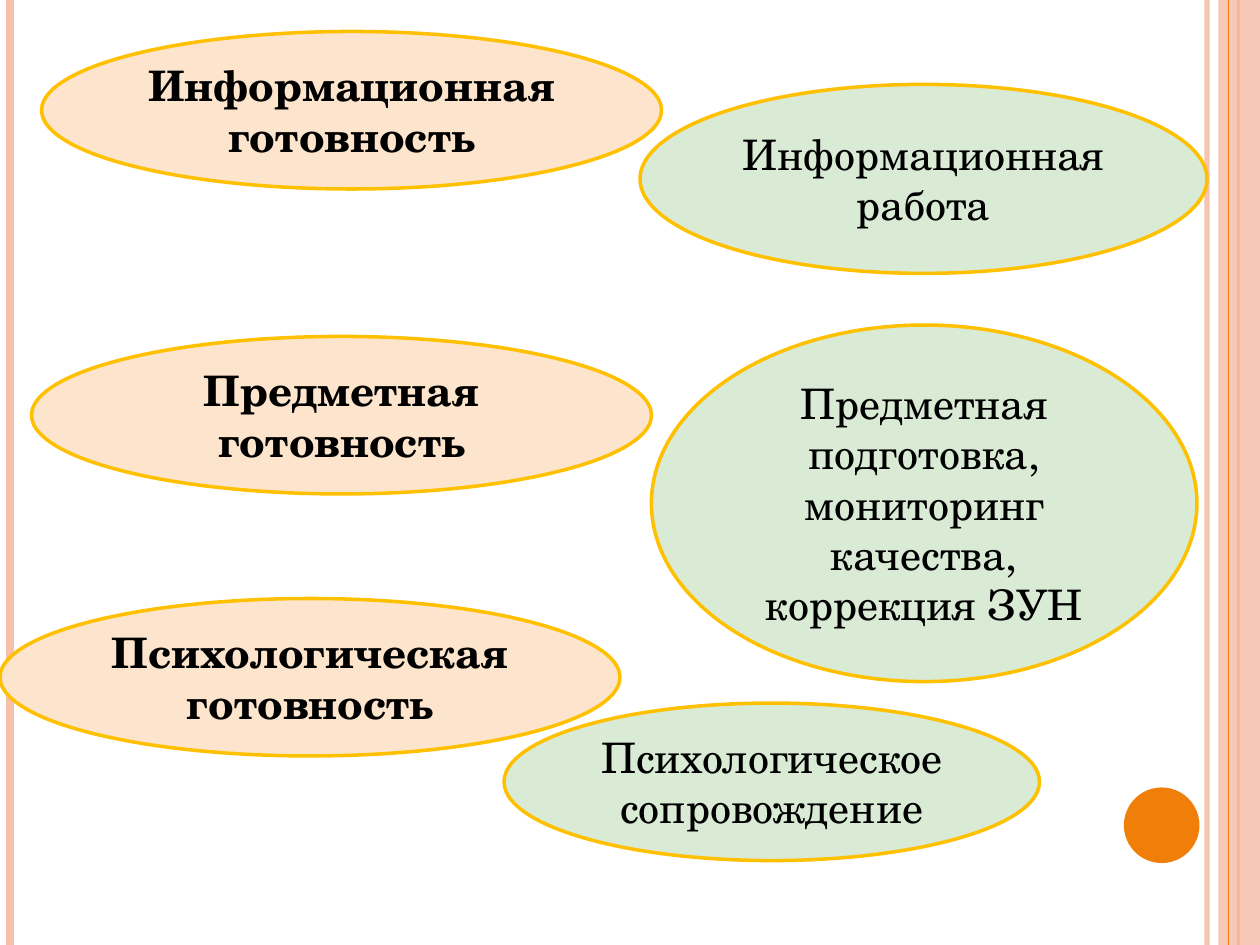
from dataclasses import dataclass

from lxml.etree import SubElement
from pptx import Presentation
from pptx.dml.color import RGBColor
from pptx.enum.shapes import MSO_CONNECTOR, MSO_SHAPE
from pptx.enum.text import MSO_ANCHOR, PP_ALIGN
from pptx.oxml.ns import qn
from pptx.util import Inches, Pt


@dataclass(frozen=True)
class Theme:
    """Colours and type of the slide."""
    accent: str = "F07F09"
    stripe: str = "F6C0AB"
    outline: str = "FFC000"
    readiness: str = "FDE5CD"
    support: str = "D9EAD5"
    ink: str = "000000"
    font: str = "TeX Gyre Schola"
    size: float = 24
    outline_width: float = 2


@dataclass(frozen=True)
class Rule:
    """A full-height vertical line."""
    x: float
    color: str
    width: float
    opacity: int = 100


@dataclass(frozen=True)
class Bubble:
    """A labelled ellipse."""
    text: str
    left: float
    top: float
    width: float
    height: float
    fill: str
    bold: bool = False


THEME = Theme()
WIDTH, HEIGHT = 10, 7.5

BACK_RULES = [
    Rule(9.58, THEME.stripe, 3, 93),
    Rule(0.08, THEME.stripe, 4.5),
    Rule(9.83, THEME.accent, 1.5),
]
FRONT_RULE = Rule(9.75, THEME.accent, 0.75)

READINESS = [
    Bubble(f"{kind} готовность", left, top, 4.92, 1.25, THEME.readiness, True)
    for kind, left, top in [
        ("Информационная", 0.33, 0.25),
        ("Предметная", 0.25, 2.67),
        ("Психологическая", 0, 4.75),
    ]
]
SUPPORT = [
    Bubble("Информационная работа", 5.08, 0.67, 4.5, 1.5, THEME.support),
    Bubble("Предметная подготовка, мониторинг качества, коррекция ЗУН",
           5.17, 2.58, 4.33, 2.83, THEME.support),
    Bubble("Психологическое сопровождение", 4, 5.58, 4.25, 1.25, THEME.support),
]


def set_opacity(sp, percent: int) -> None:
    """Set the opacity of the first solid colour of a shape or line."""
    color = next(sp._element.spPr.iter(qn("a:srgbClr")))
    SubElement(color, qn("a:alpha"), val=str(percent * 1000))


def add_rule(shapes, rule: Rule) -> None:
    """Draw a vertical line from top to bottom of the slide."""
    x = Inches(rule.x)
    line = shapes.add_connector(MSO_CONNECTOR.STRAIGHT, x, 0, x, Inches(HEIGHT))
    line.line.color.rgb = RGBColor.from_string(rule.color)
    line.line.width = Pt(rule.width)
    SubElement(line._element.spPr, qn("a:effectLst"))
    if rule.opacity < 100:
        set_opacity(line, rule.opacity)


def add_filled(shapes, kind: MSO_SHAPE, left: float, top: float,
               width: float, height: float, fill: str):
    """Add a flat filled shape without outline."""
    sp = shapes.add_shape(kind, Inches(left), Inches(top), Inches(width), Inches(height))
    sp.shadow.inherit = False
    sp.fill.solid()
    sp.fill.fore_color.rgb = RGBColor.from_string(fill)
    sp.line.fill.background()
    return sp


def add_bubble(shapes, bubble: Bubble) -> None:
    """Draw an outlined ellipse with centred text."""
    sp = add_filled(shapes, MSO_SHAPE.OVAL, bubble.left, bubble.top,
                    bubble.width, bubble.height, bubble.fill)
    sp.line.color.rgb = RGBColor.from_string(THEME.outline)
    sp.line.width = Pt(THEME.outline_width)
    tf = sp.text_frame
    tf.word_wrap = True
    tf.vertical_anchor = MSO_ANCHOR.MIDDLE
    p = tf.paragraphs[0]
    p.text = bubble.text
    p.alignment = PP_ALIGN.CENTER
    p.font.name = THEME.font
    p.font.size = Pt(THEME.size)
    p.font.bold = bubble.bold
    p.font.color.rgb = RGBColor.from_string(THEME.ink)


def main() -> None:
    """Build and save the slide."""
    prs = Presentation()
    prs.slide_width, prs.slide_height = Inches(WIDTH), Inches(HEIGHT)
    shapes = prs.slides.add_slide(prs.slide_layouts[6]).shapes
    for rule in BACK_RULES:
        add_rule(shapes, rule)
    band = add_filled(shapes, MSO_SHAPE.RECTANGLE, 9.67, 0, 0.33, HEIGHT, THEME.stripe)
    set_opacity(band, 87)
    add_rule(shapes, FRONT_RULE)
    add_filled(shapes, MSO_SHAPE.OVAL, 8.92, 6.25, 0.6, 0.6, THEME.accent)
    for bubble in READINESS + SUPPORT:
        add_bubble(shapes, bubble)
    prs.save("out.pptx")


if __name__ == "__main__":
    main()
